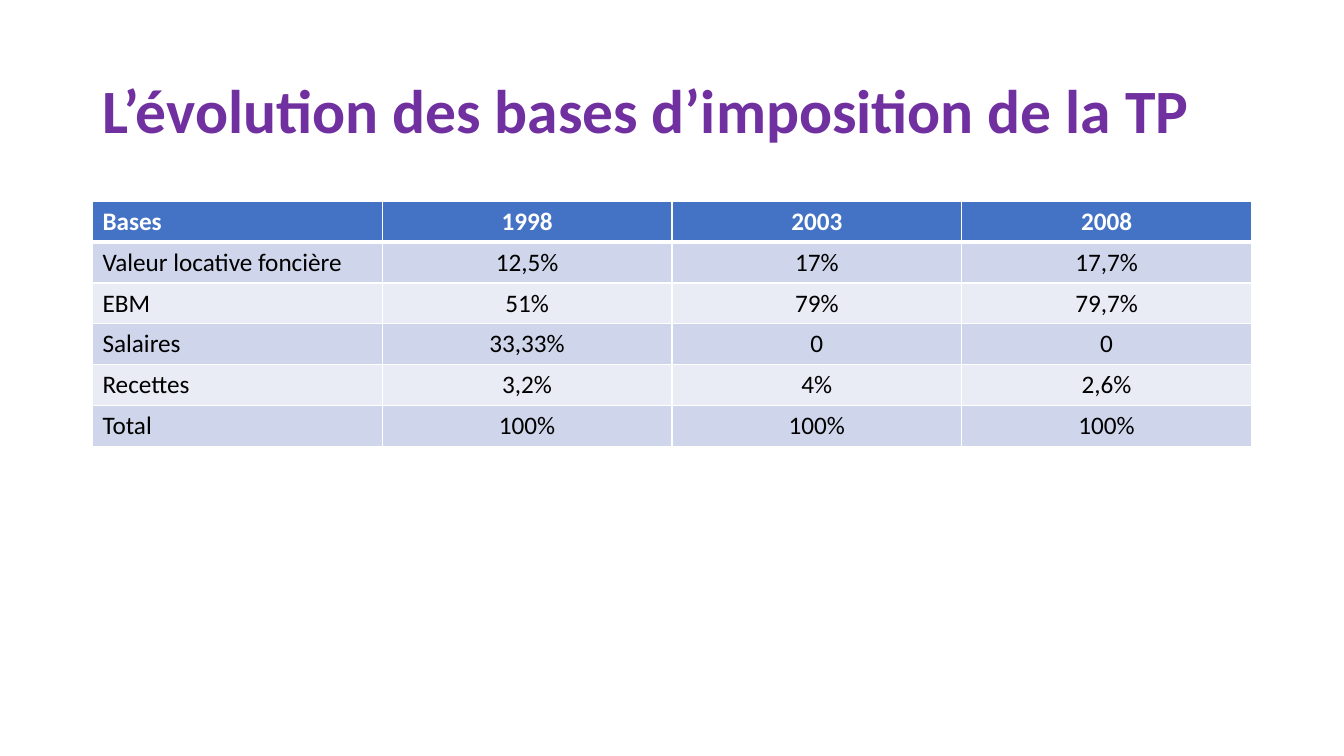
import dataclasses

import lxml.etree
import pptx
import pptx.dml.color
import pptx.enum.text
import pptx.oxml.ns
import pptx.slide
import pptx.table
import pptx.text.text
import pptx.util

Cm = pptx.util.Cm
Pt = pptx.util.Pt

FONT = "Calibri"
LEFT, WIDTH = Cm(2.33), Cm(29.21)
TABLE_TOP, ROW_HEIGHT = Cm(5.07), Cm(1.03)
WHITE = "FFFFFF"


@dataclasses.dataclass(frozen=True)
class RowStyle:
    fill: str
    color: str
    bold: bool
    top_border: float
    bottom_border: float


HEADER = RowStyle("4472C4", WHITE, True, 1, 3)
FIRST = RowStyle("CFD5EA", "000000", False, 3, 1)
ODD = dataclasses.replace(FIRST, top_border=1)
EVEN = dataclasses.replace(ODD, fill="E9EBF5")

TAX_BASES: list[tuple[RowStyle, list[str]]] = [
    (HEADER, ["Bases", "1998", "2003", "2008"]),
    (FIRST, ["Valeur locative foncière", "12,5%", "17%", "17,7%"]),
    (EVEN, ["EBM", "51%", "79%", "79,7%"]),
    (ODD, ["Salaires", "33,33%", "0", "0"]),
    (EVEN, ["Recettes", "3,2%", "4%", "2,6%"]),
    (ODD, ["Total", "100%", "100%", "100%"]),
]


def rgb(value: str) -> pptx.dml.color.RGBColor:
    return pptx.dml.color.RGBColor.from_string(value)


def set_font(para: pptx.text.text._Paragraph, size: float, color: str, bold: bool) -> None:
    para.font.name = FONT
    para.font.size = Pt(size)
    para.font.bold = bold
    para.font.color.rgb = rgb(color)


def set_borders(cell: pptx.table._Cell, style: RowStyle) -> None:
    """Put white lines ahead of the fill, in the order the schema asks for."""
    qn = pptx.oxml.ns.qn
    properties = cell._tc.get_or_add_tcPr()
    widths = {"L": 1, "R": 1, "T": style.top_border, "B": style.bottom_border}
    for position, (side, width) in enumerate(widths.items()):
        line = lxml.etree.Element(qn(f"a:ln{side}"), w=str(Pt(width)))
        fill = lxml.etree.SubElement(line, qn("a:solidFill"))
        lxml.etree.SubElement(fill, qn("a:srgbClr"), val=WHITE)
        properties.insert(position, line)


def add_title(page: pptx.slide.Slide, text: str) -> None:
    box = page.shapes.add_textbox(LEFT, Cm(1.01), WIDTH, Cm(3.68))
    frame = box.text_frame
    frame.word_wrap = True
    frame.vertical_anchor = pptx.enum.text.MSO_ANCHOR.MIDDLE
    para = frame.paragraphs[0]
    para.text = text
    para.line_spacing = 0.9
    set_font(para, 44, "7030A0", True)


def add_tax_table(page: pptx.slide.Slide) -> None:
    row_count, column_count = len(TAX_BASES), len(TAX_BASES[0][1])
    table = page.shapes.add_table(
        row_count, column_count, LEFT, TABLE_TOP, WIDTH, ROW_HEIGHT * row_count
    ).table
    for row, (style, texts) in enumerate(TAX_BASES):
        for column, text in enumerate(texts):
            cell = table.cell(row, column)
            cell.fill.solid()
            cell.fill.fore_color.rgb = rgb(style.fill)
            set_borders(cell, style)
            para = cell.text_frame.paragraphs[0]
            para.text = text
            set_font(para, 18, style.color, style.bold)
            if column > 0:
                para.alignment = pptx.enum.text.PP_ALIGN.CENTER


def main() -> None:
    deck = pptx.Presentation()
    deck.slide_width, deck.slide_height = Cm(33.87), Cm(19.05)
    page = deck.slides.add_slide(deck.slide_layouts[6])
    add_title(page, "L’évolution des bases d’imposition de la TP")
    add_tax_table(page)
    deck.save("out.pptx")


if __name__ == "__main__":
    main()
